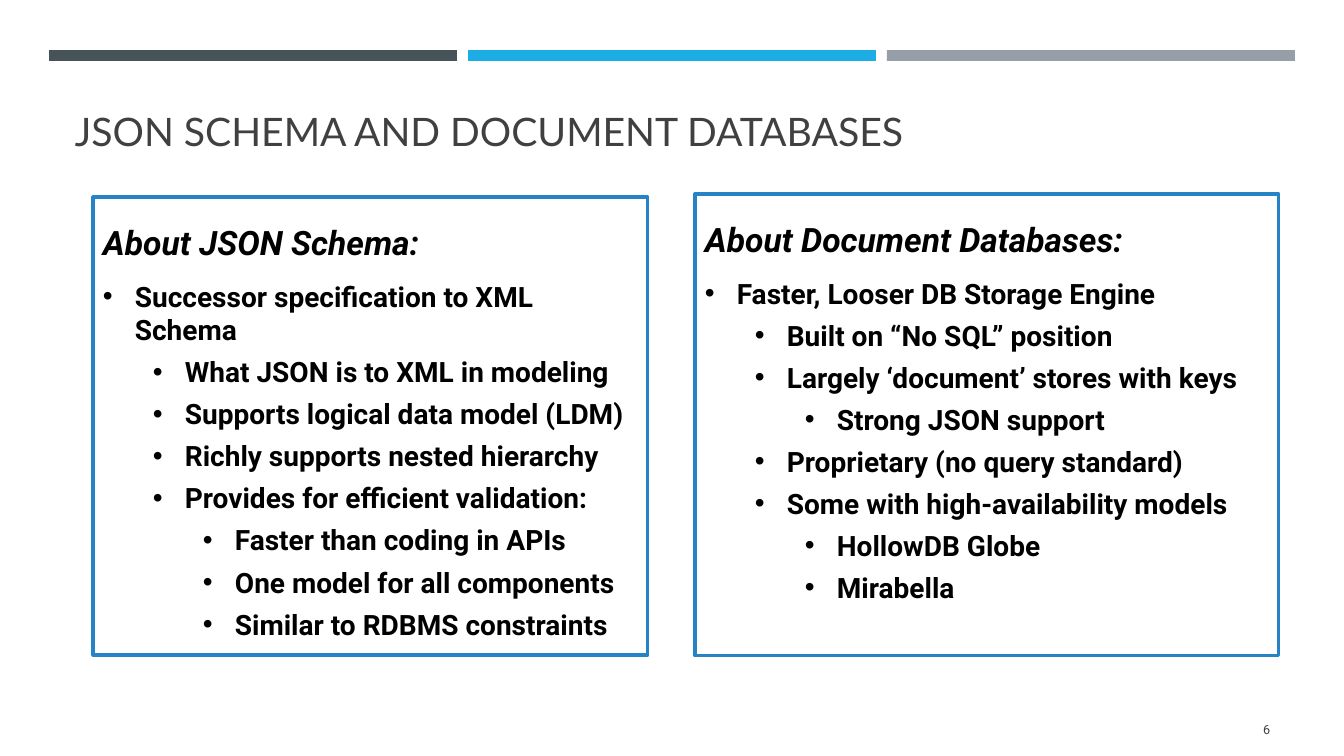
from lxml import etree
from pptx import Presentation, util as u
from pptx.dml.color import RGBColor
from pptx.enum import shapes, text
from pptx.oxml.ns import qn

PX = 914400 / 100.8
COLORS = {"slate": "465359", "sky": "1CADE4", "gray": "969FA7",
          "frame": "2683C6", "heading": "404040", "body": "000000"}


def px(*lengths):
    return [u.Emu(round(length * PX)) for length in lengths]


def style(paragraph, font, size, color, bold=False, italic=False):
    paragraph.font.name = font
    paragraph.font.size = u.Pt(size)
    paragraph.font.bold = bold
    paragraph.font.italic = italic
    paragraph.font.color.rgb = RGBColor.from_string(COLORS[color])


deck = Presentation()
deck.slide_width, deck.slide_height = px(1344, 756)
slide = deck.slides.add_slide(deck.slide_layouts[6])

for column, color in enumerate(["slate", "sky", "gray"]):
    band = slide.shapes.add_shape(shapes.MSO_SHAPE.RECTANGLE, *px(49 + 419 * column, 50, 408, 11))
    band.shadow.inherit = False
    band.fill.solid()
    band.fill.fore_color.rgb = RGBColor.from_string(COLORS[color])
    band.line.fill.background()

labels = [
    ("JSON SCHEMA AND DOCUMENT DATABASES", (65, 78, 1215, 81), "Lato", 28,
     text.MSO_ANCHOR.BOTTOM, text.PP_ALIGN.LEFT),
    ("6", (1164, 709, 116, 40), "Roboto", 9, text.MSO_ANCHOR.MIDDLE, text.PP_ALIGN.RIGHT),
]
for wording, place, font, size, anchor, alignment in labels:
    label = slide.shapes.add_textbox(*px(*place)).text_frame
    label.word_wrap = True
    label.vertical_anchor = anchor
    label.text = wording
    label.paragraphs[0].alignment = alignment
    style(label.paragraphs[0], font, size, "heading")

panels = [
    ((695, 194, 584, 462), "About Document Databases:", [
        (0, "Faster, Looser DB Storage Engine"),
        (1, "Built on “No SQL” position"),
        (1, "Largely ‘document’ stores with keys"),
        (2, "Strong JSON support"),
        (1, "Proprietary (no query standard)"),
        (1, "Some with high-availability models"),
        (2, "HollowDB Globe"),
        (2, "Mirabella"),
    ]),
    ((93, 197, 555, 458), "About JSON Schema:", [
        (0, "Successor specification to XML Schema"),
        (1, "What JSON is to XML in modeling"),
        (1, "Supports logical data model (LDM)"),
        (1, "Richly supports nested hierarchy"),
        (1, "Provides for efficient validation:"),
        (2, "Faster than coding in APIs"),
        (2, "One model for all components"),
        (2, "Similar to RDBMS constraints"),
    ]),
]
for place, heading, points in panels:
    panel = slide.shapes.add_shape(shapes.MSO_SHAPE.RECTANGLE, *px(*place))
    panel.shadow.inherit = False
    panel.fill.background()
    panel.line.color.rgb = RGBColor.from_string(COLORS["frame"])
    panel.line.width = u.Pt(2.25)
    content = panel.text_frame
    content.word_wrap = True
    content.vertical_anchor = text.MSO_ANCHOR.TOP

    title = content.paragraphs[0]
    title.text = heading
    title.alignment = text.PP_ALIGN.LEFT
    title.line_spacing = 1.5
    title.space_after = u.Pt(12)
    style(title, "Roboto", 24, "body", bold=True, italic=True)

    for level, wording in points:
        point = content.add_paragraph()
        point.text = wording
        point.level = level
        point.alignment = text.PP_ALIGN.LEFT
        point.space_after = u.Pt(6)
        style(point, "Roboto", 20, "body", bold=True)
        margin, hanging = px(32 + 50 * level, -32)
        properties = point._p.get_or_add_pPr()
        properties.set("marL", str(margin))
        properties.set("indent", str(hanging))
        bullet_font = etree.Element(qn("a:buFont"), typeface="Arial")
        bullet = etree.Element(qn("a:buChar"), char="•")
        run_defaults = properties.find(qn("a:defRPr"))
        run_defaults.addprevious(bullet_font)
        run_defaults.addprevious(bullet)

deck.save("out.pptx")
